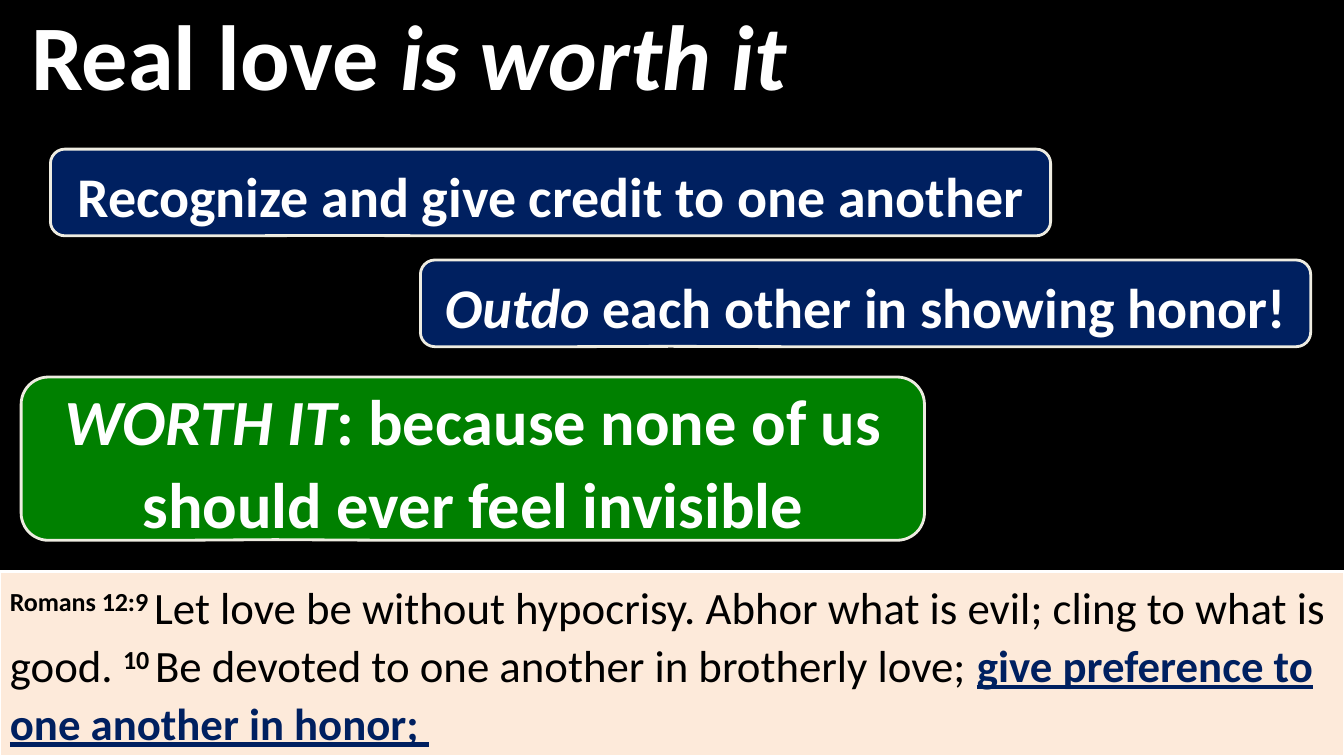
"""Build a slide on showing honor to one another, with a Bible verse."""
from lxml import etree
from pptx import Presentation
from pptx.dml.color import RGBColor
from pptx.enum.shapes import MSO_SHAPE
from pptx.enum.text import MSO_ANCHOR, PP_ALIGN
from pptx.oxml.ns import qn
from pptx.util import Inches, Pt

RECTANGLE = MSO_SHAPE.RECTANGLE
CALLOUT = MSO_SHAPE.ROUNDED_RECTANGULAR_CALLOUT
TOP, MIDDLE = MSO_ANCHOR.TOP, MSO_ANCHOR.MIDDLE
LEFT, CENTER = PP_ALIGN.LEFT, PP_ALIGN.CENTER

BLACK = RGBColor(0x00, 0x00, 0x00)
WHITE = RGBColor(0xFF, 0xFF, 0xFF)
NAVY = RGBColor(0x00, 0x20, 0x60)
GREEN = RGBColor(0x00, 0x80, 0x00)
PEACH = RGBColor(0xFD, 0xEA, 0xDA)
IVORY = RGBColor(0xEE, 0xEC, 0xE1)

FONT = "Calibri"
SLIDE_WIDTH, SLIDE_HEIGHT = 13.33, 7.5
LINE_SPACING = 1.07
CALLOUT_ADJUSTMENTS = (-0.219, 0.496, 0.167)

CALLOUTS = [
    ((0.5, 1.48, 9.92, 0.86), NAVY, 40,
     [("Recognize and give credit to one another", "")]),
    ((4.17, 2.58, 8.83, 0.86), NAVY, 40,
     [("Outdo", "italic"), (" each other in showing honor!", "")]),
    ((0.21, 3.74, 8.96, 1.62), GREEN, 46,
     [("WORTH IT", "italic"),
      (": because none of us should ever feel invisible", "")]),
]
VERSE = [
    ("Romans 12:9 ", "number"),
    ("Let love be without hypocrisy. Abhor what is evil; "
     "cling to what is good. ", ""),
    ("10 ", "number"),
    ("Be devoted to one another in brotherly love; ", ""),
    ("give preference to one another in honor; ", "emphasis"),
]


def add_box(slide, kind, box, fill, line=None, line_width=0):
    """Add a filled shape without shadow and return it."""
    shape = slide.shapes.add_shape(kind, *(Inches(length) for length in box))
    shape.shadow.inherit = False
    shape.fill.solid()
    shape.fill.fore_color.rgb = fill
    if line is None:
        shape.line.fill.background()
    else:
        shape.line.color.rgb = line
        shape.line.width = Pt(line_width)
    return shape


def write_text(shape, pieces, size, color, bold, alignment, anchor):
    """Write one paragraph of (text, style) pieces into a shape."""
    frame = shape.text_frame
    frame.word_wrap = True
    frame.vertical_anchor = anchor
    paragraph = frame.paragraphs[0]
    paragraph.alignment = alignment
    for text, style in pieces:
        run = paragraph.add_run()
        run.text = text
        font = run.font
        font.name = FONT
        font.size = Pt(size)
        font.color.rgb = NAVY if style == "emphasis" else color
        font.bold = bold or style in ("number", "emphasis")
        font.italic = style == "italic"
        font.underline = style == "emphasis"
        if style == "number":
            run._r.get_or_add_rPr().set("baseline", "30000")
    return paragraph


def add_verse(slide):
    """Add the verse panel along the bottom."""
    panel = add_box(slide, RECTANGLE, (0, 5.67, SLIDE_WIDTH, 1.83),
                    PEACH, WHITE, 1.5)
    paragraph = write_text(panel, VERSE, 32, BLACK, False, LEFT, TOP)
    paragraph.line_spacing = LINE_SPACING


def add_title(slide):
    """Add the translucent title band along the top."""
    band = add_box(slide, RECTANGLE, (0, 0, SLIDE_WIDTH, 1.07), BLACK)
    color = band._element.spPr.find(qn("a:solidFill"))[0]
    etree.SubElement(color, qn("a:alpha")).set("val", "64000")
    band.text_frame.margin_left = Inches(0.31)
    write_text(band, [("Real love ", ""), ("is worth it", "italic")],
               66, WHITE, True, LEFT, MIDDLE)


def add_callout(slide, box, fill, size, pieces):
    """Add a rounded callout with centred bold text."""
    callout = add_box(slide, CALLOUT, box, fill, IVORY, 2)
    for index, value in enumerate(CALLOUT_ADJUSTMENTS):
        callout.adjustments[index] = value
    paragraph = write_text(callout, pieces, size, WHITE, True, CENTER, MIDDLE)
    paragraph.line_spacing = LINE_SPACING


def main():
    """Build and save the presentation."""
    presentation = Presentation()
    presentation.slide_width = Inches(SLIDE_WIDTH)
    presentation.slide_height = Inches(SLIDE_HEIGHT)
    slide = presentation.slides.add_slide(presentation.slide_layouts[6])
    slide.background.fill.solid()
    slide.background.fill.fore_color.rgb = BLACK
    add_verse(slide)
    add_title(slide)
    for box, fill, size, pieces in CALLOUTS:
        add_callout(slide, box, fill, size, pieces)
    presentation.save("out.pptx")


if __name__ == "__main__":
    main()
